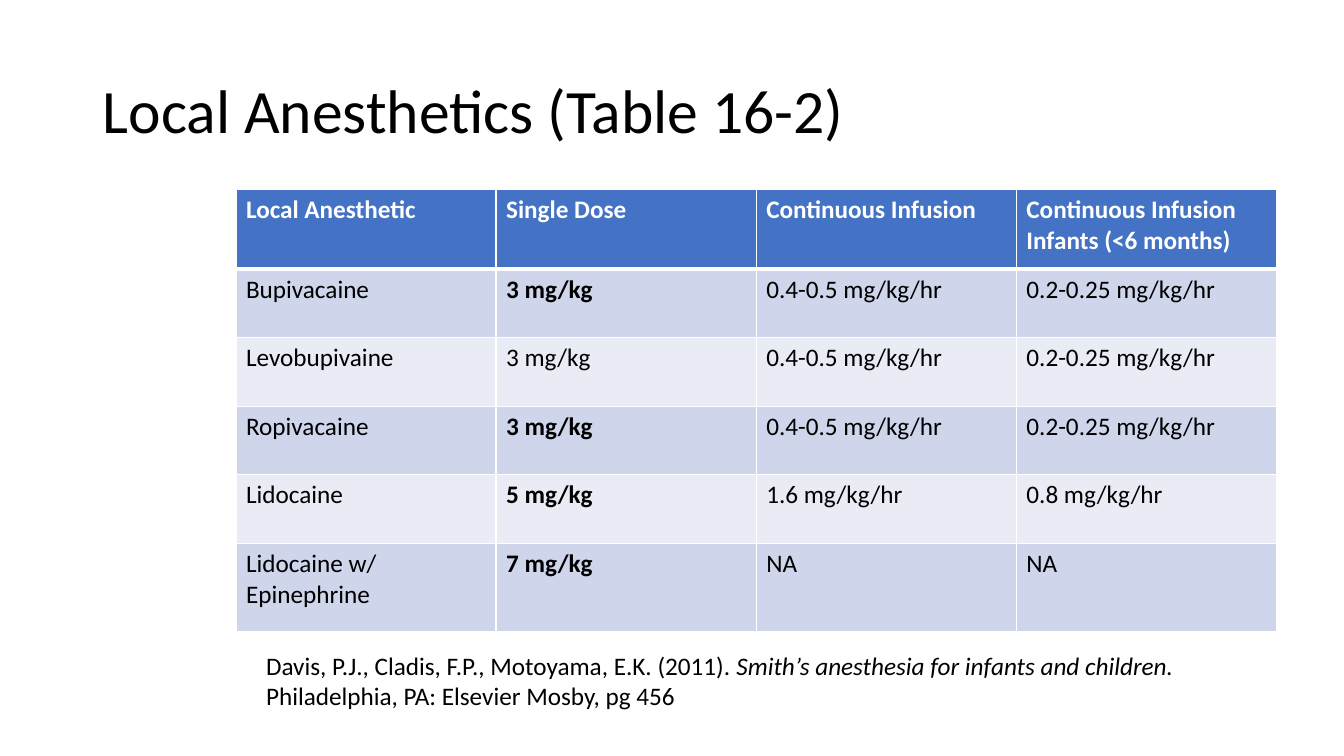
from lxml import etree
from pptx import Presentation, oxml
from pptx.dml.color import RGBColor
from pptx.enum import text
from pptx.oxml import ns
from pptx.util import Inches, Pt

TITLE = "Local Anesthetics (Table 16-2)"
HEADER = ["Local Anesthetic", "Single Dose", "Continuous Infusion",
          "Continuous Infusion Infants (<6 months)"]
# Each row: four cell texts, then whether the single dose is bold
DRUGS = [
    (["Bupivacaine", "3 mg/kg", "0.4-0.5 mg/kg/hr", "0.2-0.25 mg/kg/hr"], True),
    (["Levobupivaine", "3 mg/kg", "0.4-0.5 mg/kg/hr", "0.2-0.25 mg/kg/hr"], False),
    (["Ropivacaine", "3 mg/kg", "0.4-0.5 mg/kg/hr", "0.2-0.25 mg/kg/hr"], True),
    (["Lidocaine", "5 mg/kg", "1.6 mg/kg/hr", "0.8 mg/kg/hr"], True),
    (["Lidocaine w/ Epinephrine", "7 mg/kg", "NA", "NA"], True),
]
CITATION = [
    ("Davis, P.J., Cladis, F.P., Motoyama, E.K. (2011). ", False),
    ("Smith’s anesthesia for infants and children. ", True),
    ("Philadelphia, PA: Elsevier Mosby, pg 456", False),
]

FONT = "Calibri"
BLACK = RGBColor(0x00, 0x00, 0x00)
WHITE = RGBColor(0xFF, 0xFF, 0xFF)
HEADER_BLUE = RGBColor(0x44, 0x72, 0xC4)
BANDS = [RGBColor(0xCF, 0xD5, 0xEA), RGBColor(0xE9, 0xEB, 0xF5)]

COLUMN_WIDTH = 2.58
ROW_HEIGHTS = [0.79, 0.68, 0.68, 0.68, 0.68, 0.88]


def add_run(paragraph, content, size=18, color=BLACK, bold=False, italic=False):
    run = paragraph.add_run()
    run.text = content
    run.font.name = FONT
    run.font.size = Pt(size)
    run.font.color.rgb = color
    run.font.bold = bold
    run.font.italic = italic


def set_borders(cell, top=1, bottom=1):
    """Draw white cell borders; call before the cell gets its fill."""
    properties = cell._tc.get_or_add_tcPr()
    for side, width in (("L", 1), ("R", 1), ("T", top), ("B", bottom)):
        line = etree.SubElement(properties, ns.qn(f"a:ln{side}"), w=str(Pt(width)))
        line.append(oxml.parse_xml(
            f'<a:solidFill {ns.nsdecls("a")}><a:srgbClr val="{WHITE}"/></a:solidFill>'))


def add_title(slide):
    title = slide.shapes.title
    title.left, title.top = Inches(0.92), Inches(0.4)
    title.width, title.height = Inches(11.5), Inches(1.45)
    frame = title.text_frame
    frame.vertical_anchor = text.MSO_ANCHOR.MIDDLE
    paragraph = frame.paragraphs[0]
    paragraph.alignment = text.PP_ALIGN.LEFT
    paragraph.line_spacing = 0.9
    add_run(paragraph, TITLE, size=44)


def add_dose_table(slide):
    rows = [(HEADER, True)] + DRUGS
    table = slide.shapes.add_table(
        len(rows), len(HEADER), Inches(2.34), Inches(1.88),
        Inches(COLUMN_WIDTH * len(HEADER)), Inches(sum(ROW_HEIGHTS))).table
    for column in table.columns:
        column.width = Inches(COLUMN_WIDTH)
    for i, (contents, bold_dose) in enumerate(rows):
        table.rows[i].height = Inches(ROW_HEIGHTS[i])
        is_header = i == 0
        for j, content in enumerate(contents):
            cell = table.cell(i, j)
            set_borders(cell, top=3 if i == 1 else 1, bottom=3 if is_header else 1)
            cell.fill.solid()
            cell.fill.fore_color.rgb = HEADER_BLUE if is_header else BANDS[(i - 1) % 2]
            add_run(cell.text_frame.paragraphs[0], content,
                    color=WHITE if is_header else BLACK,
                    bold=is_header or (j == 1 and bold_dose))


def add_citation(slide):
    box = slide.shapes.add_textbox(Inches(2.54), Inches(6.4), Inches(9.62), Inches(0.71))
    frame = box.text_frame
    frame.word_wrap = True
    frame.auto_size = text.MSO_AUTO_SIZE.SHAPE_TO_FIT_TEXT
    for content, italic in CITATION:
        add_run(frame.paragraphs[0], content, italic=italic)


def main():
    presentation = Presentation()
    presentation.slide_width = Inches(13.33)
    presentation.slide_height = Inches(7.5)
    slide = presentation.slides.add_slide(presentation.slide_layouts[5])
    add_title(slide)
    add_dose_table(slide)
    add_citation(slide)
    presentation.save("out.pptx")


if __name__ == "__main__":
    main()
